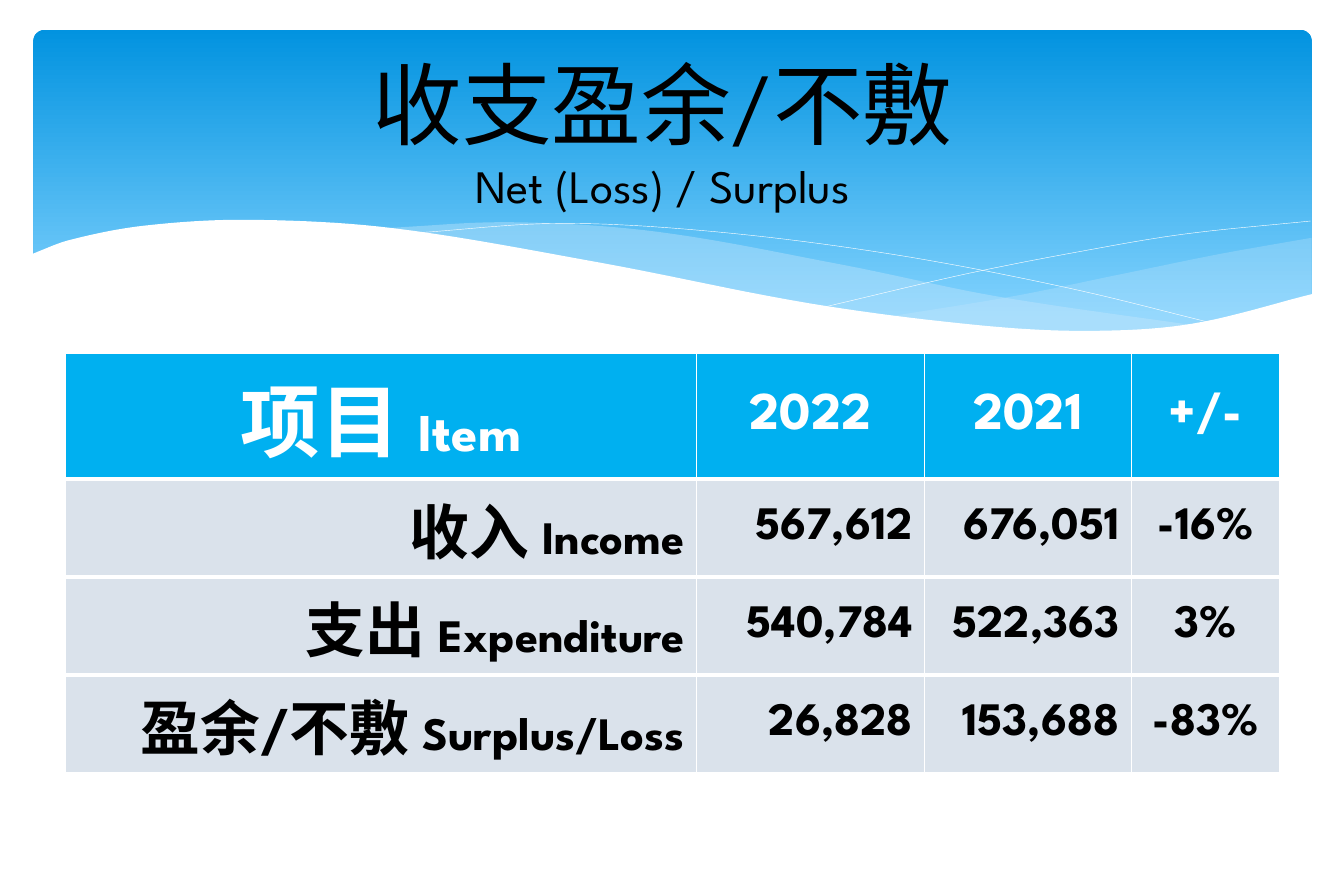
"""Build the slide comparing net surplus or loss for 2022 and 2021."""
from lxml import etree
from pptx import Presentation
from pptx.dml.color import RGBColor
from pptx.enum.shapes import MSO_SHAPE
from pptx.enum.text import MSO_ANCHOR, PP_ALIGN
from pptx.oxml.ns import qn
from pptx.util import Inches, Pt

CENTER, RIGHT = PP_ALIGN.CENTER, PP_ALIGN.RIGHT
MIDDLE = MSO_ANCHOR.MIDDLE
ROUNDED = MSO_SHAPE.ROUNDED_RECTANGLE
FONT = "League Spartan"
STEPS_PER_SPAN = 10
COLORS = {"sky_top": "0293E0", "sky_bottom": "83D3FE", "mist": "C6E7FC",
          "white": "FFFFFF", "black": "000000", "header": "00B0F0", "body": "DAE2EB"}


def add_text(paragraph, text, size, font_color="black", bold=False, align=CENTER):
    """Append a formatted run to a paragraph."""
    paragraph.alignment = align
    run = paragraph.add_run()
    run.text = text
    run.font.name = FONT
    run.font.size = Pt(size)
    run.font.bold = bold
    run.font.color.rgb = RGBColor.from_string(COLORS[font_color])


def smooth_curve(knots):
    """Return points on a cubic Hermite curve, its slope at a knot set by the two neighbours."""
    last = len(knots) - 1
    slopes = []
    for index in range(len(knots)):
        before, after = knots[max(index - 1, 0)], knots[min(index + 1, last)]
        slopes.append((after[1] - before[1]) / (after[0] - before[0]))
    points = [knots[0]]
    for (x0, y0), (x1, y1), slope0, slope1 in zip(knots, knots[1:], slopes, slopes[1:]):
        span = x1 - x0
        for step in range(1, STEPS_PER_SPAN + 1):
            t = step / STEPS_PER_SPAN
            blend = t * t * (3 - 2 * t)
            bend = span * t * (1 - t) * (slope0 * (1 - t) - slope1 * t)
            points.append((x0 + span * t, y0 + (y1 - y0) * blend + bend))
    return points


presentation = Presentation()
presentation.slide_width, presentation.slide_height = Inches(11.25), Inches(7.5)
slide = presentation.slides.add_slide(presentation.slide_layouts[6])

banner = slide.shapes.add_shape(ROUNDED, Inches(0.28), Inches(0.25), Inches(10.7), Inches(2.7))
banner.adjustments[0] = 0.034
banner.shadow.inherit = False
banner.line.fill.background()
banner.fill.gradient()
banner.fill.gradient_angle = 270
for stop, name, position in zip(banner.fill.gradient_stops, ("sky_top", "sky_bottom"), (0, 0.9)):
    stop.color.rgb = RGBColor.from_string(COLORS[name])
    stop.position = position

right_mist_top = [(7.44, 2.65), (8.48, 2.48), (9.36, 2.3), (10.19, 2.13), (10.98, 1.99)]
right_mist_bottom = [(7.44, 2.65), (8.23, 2.74), (9.1, 2.78), (9.91, 2.73), (10.98, 2.47)]
middle_mist_top = [(3.22, 1.91), (4.27, 1.86), (5.5, 1.94), (7.07, 2.22), (8.34, 2.48),
                   (10.04, 2.73)]
middle_mist_bottom = [(3.22, 1.91), (5.06, 2.22), (6.37, 2.48), (7.65, 2.68), (9.04, 2.78),
                      (10.04, 2.73)]
falling_line = [(3.48, 1.95), (4.68, 1.87), (5.99, 1.94), (7.48, 2.13), (8.94, 2.41),
                (10.21, 2.72)]
rising_line = [(6.9, 2.57), (8.1, 2.29), (9.07, 2.1), (9.91, 1.96), (10.97, 1.85)]
wave_top = [(0.26, 2.13), (0.58, 2.01), (1.2, 1.89), (2.08, 1.84), (3.29, 1.91), (5.03, 2.2),
            (6.78, 2.54), (8.17, 2.72), (9.1, 2.77), (9.98, 2.71), (10.99, 2.46)]
wave_bottom = [(0.26, 3.29), (10.99, 3.29)]

bands = [(right_mist_top, right_mist_bottom, "mist", 29),
         (middle_mist_top, middle_mist_bottom, "mist", 40),
         (falling_line, None, None, None),
         (rising_line, None, None, None),
         (wave_top, wave_bottom, "white", 100)]
for top_edge, bottom_edge, fill_name, opacity in bands:
    outline = smooth_curve(top_edge)
    if bottom_edge:
        outline += reversed(smooth_curve(bottom_edge))
    corners = [(Inches(x), Inches(y)) for x, y in outline]
    builder = slide.shapes.build_freeform(*corners[0])
    builder.add_line_segments(corners[1:], close=bottom_edge is not None)
    shape = builder.convert_to_shape()
    shape.shadow.inherit = False
    if bottom_edge:
        shape.line.fill.background()
        shape.fill.solid()
        shape.fill.fore_color.rgb = RGBColor.from_string(COLORS[fill_name])
        tint = shape.fill._xPr.find(qn("a:solidFill"))[0]
        etree.SubElement(tint, qn("a:alpha"), val=str(opacity * 1000))
    else:
        shape.fill.background()
        shape.line.color.rgb = RGBColor.from_string(COLORS["white"])
        shape.line.width = Pt(0.25)

title = slide.shapes.add_textbox(Inches(0.9), Inches(0.6), Inches(9.29), Inches(0.99)).text_frame
title.word_wrap = True
title.vertical_anchor = MIDDLE
add_text(title.paragraphs[0], "收支盈余/不敷", size=54)
add_text(title.add_paragraph(), "Net (Loss) / Surplus", size=28)

rows = [(("项目 ", "Item"), "2022", "2021", "+/-"),
        (("收入 ", "Income"), "567,612", "676,051", "-16%"),
        (("支出 ", "Expenditure"), "540,784", "522,363", "3%"),
        (("盈余/不敷 ", "Surplus/Loss"), "26,828", "153,688", "-83%")]
column_widths = [5.28, 1.91, 1.73, 1.24]
row_heights = [1.05] + [0.82] * 3
last_row, change_column = len(rows) - 1, len(column_widths) - 1
table = slide.shapes.add_table(len(rows), len(column_widths), Inches(0.55), Inches(2.96),
                               Inches(sum(column_widths)), Inches(sum(row_heights))).table
table.horz_banding = False
for column, width in zip(table.columns, column_widths):
    column.width = Inches(width)
for row, height in zip(table.rows, row_heights):
    row.height = Inches(height)

for row_index, (labels, *values) in enumerate(rows):
    is_header = row_index == 0
    text_color, fill_name = ("white", "header") if is_header else ("black", "body")
    label_size, value_size = (48, 32) if is_header else (36, 28)
    borders = {"a:lnL": 1, "a:lnR": 1, "a:lnT": 1 if is_header else 3,
               "a:lnB": 1 if row_index == last_row else 3}
    for column_index, texts in enumerate([labels] + [[value] for value in values]):
        cell = table.cell(row_index, column_index)
        cell.vertical_anchor = MIDDLE
        if column_index == 0:
            cell.margin_bottom = Inches(0.13)
        properties = cell._tc.get_or_add_tcPr()
        for tag, width in borders.items():
            border = etree.SubElement(properties, qn(tag), w=str(Pt(width)))
            border_fill = etree.SubElement(border, qn("a:solidFill"))
            etree.SubElement(border_fill, qn("a:srgbClr"), val=COLORS["white"])
        cell.fill.solid()
        cell.fill.fore_color.rgb = RGBColor.from_string(COLORS[fill_name])
        align = CENTER if is_header or column_index == change_column else RIGHT
        sizes = (label_size, value_size) if column_index == 0 else (value_size,)
        for text, size in zip(texts, sizes):
            add_text(cell.text_frame.paragraphs[0], text, size=size,
                     font_color=text_color, bold=True, align=align)

presentation.save("out.pptx")
